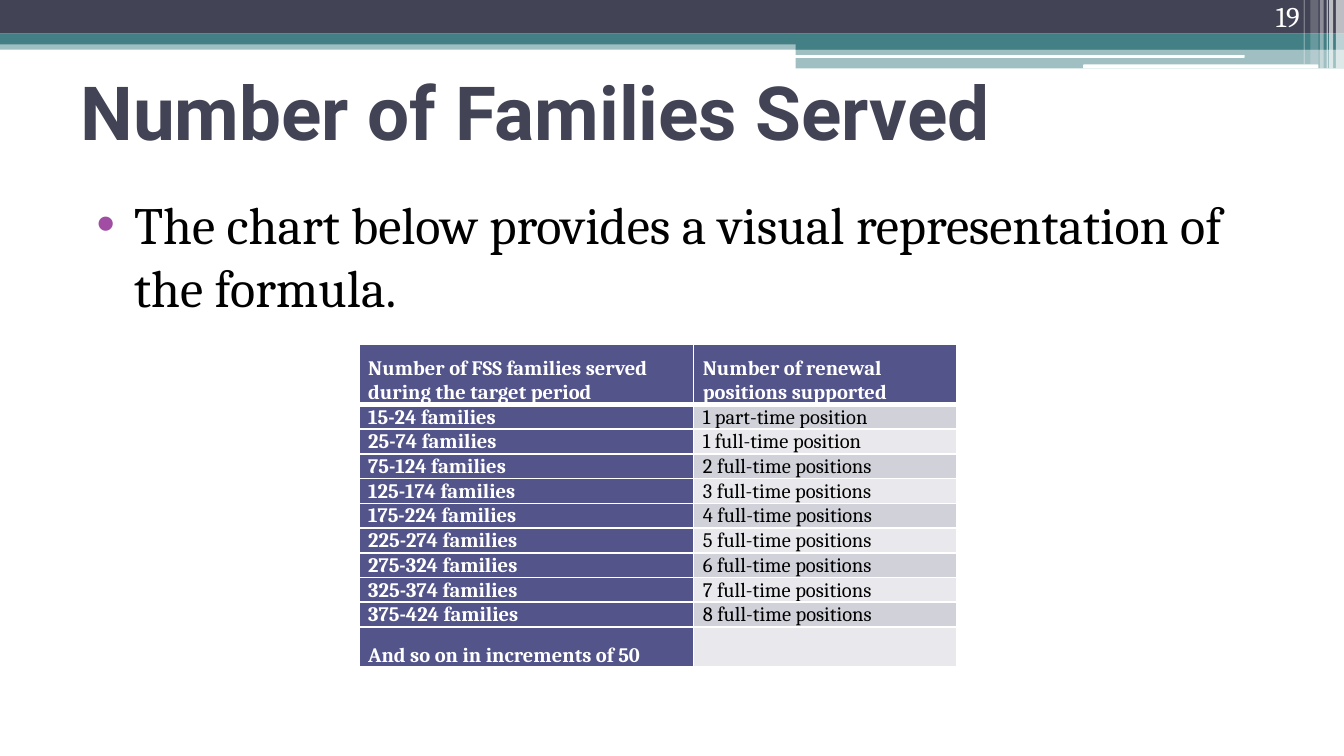
from typing import NamedTuple

import pptx
import pptx.dml.color
import pptx.enum.shapes
import pptx.enum.text
import pptx.oxml.ns
import pptx.util
from lxml import etree
from pptx.util import Inches

NAVY, TEAL, WHITE, BLACK = "424456", "438086", "FFFFFF", "000000"
INDIGO, BULLET = "53548A", "A04DA3"
ROW_TINTS = ("E9E9ED", "D1D1DA")
ANCHOR = pptx.enum.text.MSO_ANCHOR
ALIGN = pptx.enum.text.PP_ALIGN
SHAPE = pptx.enum.shapes.MSO_SHAPE


class Band(NamedTuple):
    left: float
    top: float
    width: float
    height: float
    color: str
    opacity: int = 100
    kind: int = SHAPE.RECTANGLE


BANDS = [
    Band(0, 0.3, 10, 0.07, TEAL, 50),
    Band(0, 0, 10, 0.25, NAVY),
    Band(0, 0.25, 10, 0.08, TEAL),
    Band(5.92, 0.3, 4.08, 0.07, TEAL),
    Band(5.92, 0.36, 4.08, 0.15, TEAL, 50),
    Band(5.91, 0.41, 3.35, 0.02, WHITE, kind=SHAPE.ROUNDED_RECTANGLE),
    Band(8.06, 0.48, 1.75, 0.03, WHITE, kind=SHAPE.ROUNDED_RECTANGLE),
    Band(9.94, 0, 0.06, 0.51, WHITE, 65),
    Band(9.89, 0, 0.03, 0.51, WHITE, 65),
    Band(9.87, 0, 0.01, 0.51, WHITE, 60),
    Band(9.82, 0, 0.03, 0.51, WHITE, 40),
    Band(9.75, 0, 0.06, 0.48, WHITE, 20),
    Band(9.7, 0, 0.01, 0.48, WHITE, 30),
]

FAMILY_RANGES = ["15-24"] + [f"{low}-{low + 49}" for low in range(25, 400, 50)]
POSITIONS = ["1 part-time position", "1 full-time position"] + [
    f"{count} full-time positions" for count in range(2, 9)
]
ROWS = [
    ("Number of FSS families served during the target period",
     "Number of renewal positions supported"),
    *((f"{families} families", position)
      for families, position in zip(FAMILY_RANGES, POSITIONS)),
    ("And so on in increments of 50", ""),
]
COLUMN_WIDTHS = (2.49, 1.96)
ROW_HEIGHTS = [0.45] + [0.16] * len(FAMILY_RANGES) + [0.3]


def rgb(color: str) -> pptx.dml.color.RGBColor:
    return pptx.dml.color.RGBColor.from_string(color)


def add_xml(parent, tag: str, **attributes: str):
    return etree.SubElement(parent, pptx.oxml.ns.qn(tag), attributes)


def write_text(frame, text: str, *, size: float, color: str, font: str = "Cambria",
               bold: bool = False, align=ALIGN.LEFT):
    """Fill the frame's first paragraph and return that paragraph."""
    frame.word_wrap = True
    paragraph = frame.paragraphs[0]
    paragraph.alignment = align
    run = paragraph.add_run()
    run.text = text
    run.font.size = pptx.util.Pt(size)
    run.font.name = font
    run.font.bold = bold
    run.font.color.rgb = rgb(color)
    return paragraph


def add_text(slide, left: float, top: float, width: float, height: float, text: str,
             *, anchor=ANCHOR.TOP, **text_format):
    box = slide.shapes.add_textbox(
        Inches(left), Inches(top), Inches(width), Inches(height))
    box.text_frame.vertical_anchor = anchor
    return write_text(box.text_frame, text, **text_format)


def add_bullet(paragraph) -> None:
    paragraph.space_before = pptx.util.Pt(3)
    properties = paragraph._p.get_or_add_pPr()
    properties.set("marL", str(Inches(0.4)))
    properties.set("indent", str(Inches(-0.28)))
    add_xml(add_xml(properties, "a:buClr"), "a:srgbClr", val=BULLET)
    add_xml(properties, "a:buFont", typeface="Arial")
    add_xml(properties, "a:buChar", char="•")


def draw_band(slide, band: Band) -> None:
    shape = slide.shapes.add_shape(
        band.kind, Inches(band.left), Inches(band.top),
        Inches(band.width), Inches(band.height))
    shape.shadow.inherit = False
    shape.line.fill.background()
    shape.fill.solid()
    shape.fill.fore_color.rgb = rgb(band.color)
    if band.opacity < 100:
        color = shape.fill._xPr.find(".//" + pptx.oxml.ns.qn("a:srgbClr"))
        add_xml(color, "a:alpha", val=str(band.opacity * 1000))


def add_header_borders(cell) -> None:
    """Draw white borders with a thick bottom edge; other rows use the table style."""
    properties = cell._tc.get_or_add_tcPr()
    for side, width in {"L": 1, "R": 1, "T": 1, "B": 3}.items():
        line = add_xml(properties, f"a:ln{side}", w=str(pptx.util.Pt(width)))
        add_xml(add_xml(line, "a:solidFill"), "a:srgbClr", val=WHITE)


def draw_table(slide) -> None:
    table = slide.shapes.add_table(
        len(ROWS), len(COLUMN_WIDTHS), Inches(2.67), Inches(2.56),
        Inches(sum(COLUMN_WIDTHS)), Inches(sum(ROW_HEIGHTS))).table
    table.first_col = True
    for column, width in zip(table.columns, COLUMN_WIDTHS):
        column.width = Inches(width)
    for row_index, (texts, height) in enumerate(zip(ROWS, ROW_HEIGHTS)):
        table.rows[row_index].height = Inches(height)
        for column_index, text in enumerate(texts):
            cell = table.cell(row_index, column_index)
            heading = row_index == 0 or column_index == 0
            if row_index == 0:
                add_header_borders(cell)
            cell.fill.solid()
            cell.fill.fore_color.rgb = rgb(INDIGO if heading else ROW_TINTS[row_index % 2])
            cell.margin_left = cell.margin_right = Inches(0.07)
            cell.margin_top = cell.margin_bottom = 0
            cell.vertical_anchor = ANCHOR.BOTTOM
            write_text(cell.text_frame, text, size=11, bold=heading,
                       color=WHITE if heading else BLACK)


def main() -> None:
    presentation = pptx.Presentation()
    presentation.slide_width = Inches(10)
    presentation.slide_height = Inches(10 * 9 / 16)
    slide = presentation.slides.add_slide(presentation.slide_layouts[6])
    for band in BANDS:
        draw_band(slide, band)
    add_text(slide, 0.5, 0.38, 9, 0.88, "Number of Families Served",
             size=40, color=NAVY, font="Roboto", bold=True, anchor=ANCHOR.MIDDLE)
    introduction = add_text(
        slide, 0.5, 1.38, 9, 4.02,
        "The chart below provides a visual representation of the formula.",
        size=28, color=BLACK)
    add_bullet(introduction)
    add_text(slide, 8.94, 0, 0.83, 0.3, "19", size=15.3, color=WHITE,
             align=ALIGN.RIGHT, anchor=ANCHOR.BOTTOM)
    draw_table(slide)
    presentation.save("out.pptx")


if __name__ == "__main__":
    main()
